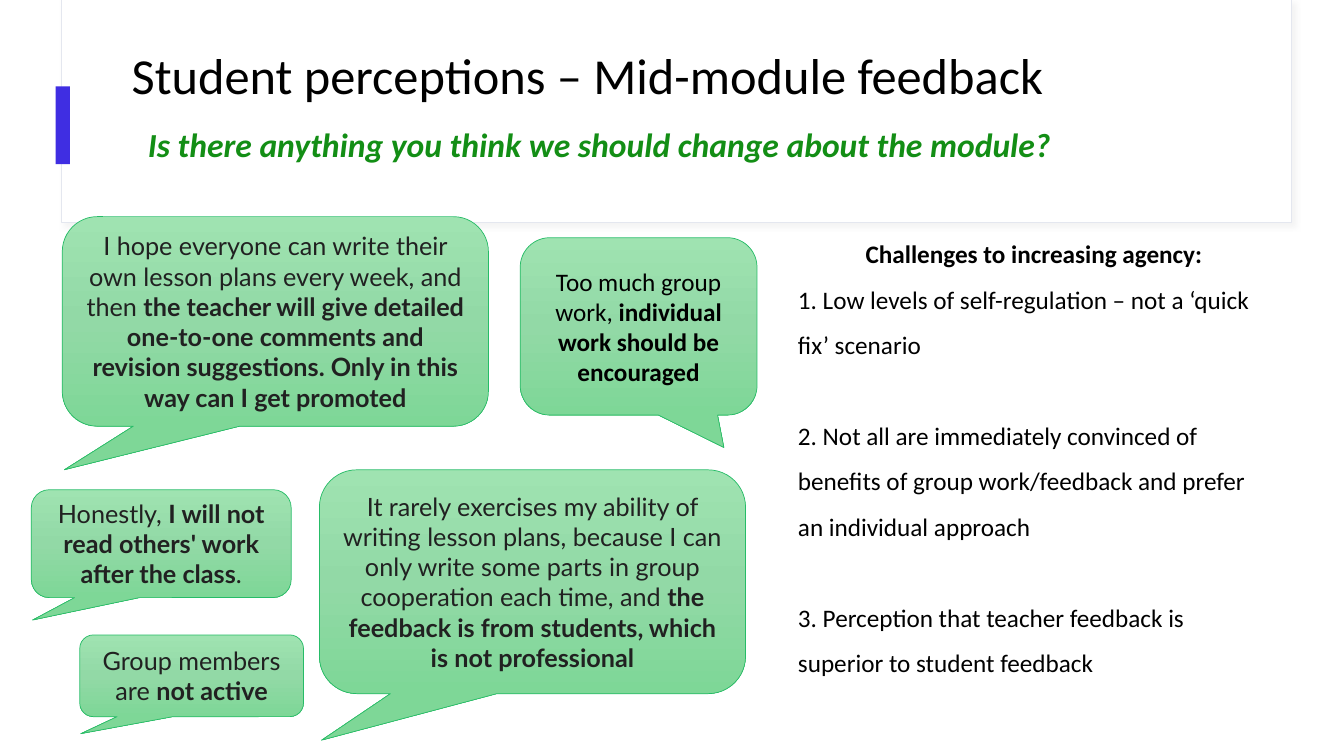
import copy

import pptx
import pptx.dml.color
import pptx.enum.shapes
import pptx.enum.text
import pptx.oxml
import pptx.oxml.ns
import pptx.util

Cm, Pt = pptx.util.Cm, pptx.util.Pt
RGB = pptx.dml.color.RGBColor.from_string
SHAPE = pptx.enum.shapes.MSO_SHAPE
ANCHOR = pptx.enum.text.MSO_ANCHOR
ALIGN = pptx.enum.text.PP_ALIGN

COLORS = {
    "white": "FFFFFF", "black": "000000", "ink": "212121",
    "header line": "E4E7EF", "shadow": "D9D9D9", "accent": "3F2EE2",
    "question": "138E15", "callout line": "26BC67",
    "callout top": "9FE3B1", "callout middle": "92D9A6", "callout bottom": "7ED797",
}

presentation = pptx.Presentation()
presentation.slide_width, presentation.slide_height = Cm(33.87), Cm(19.05)
slide = presentation.slides.add_slide(presentation.slide_layouts[6])


def style_paragraph(paragraph, font_name, size, color, bold=None):
    paragraph.font.name = font_name
    paragraph.font.size = Pt(size)
    paragraph.font.color.rgb = RGB(COLORS[color])
    paragraph.font.bold = bold


def add_text_frame(left, top, width, height, anchor=ANCHOR.TOP):
    box = slide.shapes.add_textbox(Cm(left), Cm(top), Cm(width), Cm(height))
    box.text_frame.word_wrap = True
    box.text_frame.vertical_anchor = anchor
    return box.text_frame


# Header panel with a soft shadow
header = slide.shapes.add_shape(SHAPE.RECTANGLE, Cm(1.55), Cm(0), Cm(31.01), Cm(5.61))
header.fill.solid()
header.fill.fore_color.rgb = RGB(COLORS["white"])
header.line.color.rgb = RGB(COLORS["header line"])
header.line.width = Pt(0.75)
header._element.spPr.append(pptx.oxml.parse_xml(
    f'<a:effectLst {pptx.oxml.ns.nsdecls("a")}>'
    f'<a:outerShdw blurRad="{Pt(4)}" dist="{Pt(3)}" dir="2700000" algn="tl">'
    f'<a:srgbClr val="{COLORS["shadow"]}"><a:alpha val="30000"/></a:srgbClr>'
    '</a:outerShdw></a:effectLst>'))

# Accent bar
accent = slide.shapes.add_shape(SHAPE.RECTANGLE, Cm(1.4), Cm(2.18), Cm(0.36), Cm(1.96))
accent.shadow.inherit = False
accent.fill.solid()
accent.fill.fore_color.rgb = RGB(COLORS["accent"])
accent.line.fill.background()

# Title and question
title = add_text_frame(3.07, 0.33, 28.24, 3.28, ANCHOR.MIDDLE).paragraphs[0]
title.text = "Student perceptions – Mid-module feedback"
title.line_spacing = 0.9
style_paragraph(title, "Calibri", 36, "black")

question = add_text_frame(3.48, 3, 29.74, 1.27).paragraphs[0]
question.text = "Is there anything you think we should change about the module?"
style_paragraph(question, "Calibri", 24, "question", bold=True)
question.font.italic = True

# Student comments: position and size, tail, font, color, plain / bold / plain text
left_tail, right_tail = (-0.495, 0.708), (0.36, 0.683)
comments = [
    ((1.57, 5.46, 10.74, 5.28), left_tail, "Lato", "ink",
     ("I hope everyone can write their own lesson plans every week, and then ",
      "the teacher will give detailed one-to-one comments and revision suggestions. "
      "Only in this way can I get promoted")),
    ((13.11, 5.99, 5.97, 4.47), right_tail, "Calibri", "black",
     ("Too much group work, ", "individual work should be encouraged")),
    ((8.05, 11.84, 10.74, 5.64), left_tail, "Lato", "ink",
     ("It rarely exercises my ability of writing lesson plans, because I can only write "
      "some parts in group cooperation each time, and ",
      "the feedback is from students, which is not professional")),
    ((0.79, 12.34, 6.55, 2.72), left_tail, "Lato", "ink",
     ("Honestly, ", "I will not read others' work after the class", ".")),
    ((2.01, 16, 5.64, 2.06), left_tail, "Lato", "ink",
     ("Group members are ", "not active")),
]
gradient = [(0, "callout top"), (0.5, "callout middle"), (1, "callout bottom")]

for box, tail, font_name, color, parts in comments:
    callout = slide.shapes.add_shape(SHAPE.ROUNDED_RECTANGULAR_CALLOUT, *map(Cm, box))
    callout.shadow.inherit = False
    for index, value in enumerate((*tail, 0.167)):
        callout.adjustments[index] = value
    callout.line.color.rgb = RGB(COLORS["callout line"])
    callout.line.width = Pt(0.5)

    # Vertical gradient; the default has two stops, so a third is added
    callout.fill.gradient()
    callout.fill.gradient_angle = 270
    stop_list = callout._element.spPr.find(".//" + pptx.oxml.ns.qn("a:gsLst"))
    stop_list.append(copy.deepcopy(stop_list[0]))
    for stop, (position, stop_color) in zip(callout.fill.gradient_stops, gradient):
        stop.position = position
        stop.color.rgb = RGB(COLORS[stop_color])

    callout.text_frame.word_wrap = True
    callout.text_frame.vertical_anchor = ANCHOR.MIDDLE
    paragraph = callout.text_frame.paragraphs[0]
    paragraph.alignment = ALIGN.CENTER
    style_paragraph(paragraph, font_name, 18, color)
    for index, part in enumerate(parts):
        run = paragraph.add_run()
        run.text = part
        run.font.bold = index == 1

# Challenges: centred heading and three points
challenges = [
    ("Challenges to increasing agency:", 0),
    ("1. Low levels of self-regulation – not a ‘quick fix’ scenario", 0),
    ("2. Not all are immediately convinced of benefits of group work/feedback "
     "and prefer an individual approach", 32.5),
    ("3. Perception that teacher feedback is superior to student feedback", 32.5),
]
challenge_frame = add_text_frame(19.86, 5.51, 12.4, 11.66)
for index, (text, space_before) in enumerate(challenges):
    paragraph = challenge_frame.add_paragraph() if index else challenge_frame.paragraphs[0]
    paragraph.text = text
    paragraph.line_spacing = 1.5
    paragraph.space_before = Pt(space_before)
    paragraph.alignment = ALIGN.LEFT if index else ALIGN.CENTER
    style_paragraph(paragraph, "Calibri", 18, "black", bold=index == 0)

presentation.save("out.pptx")
